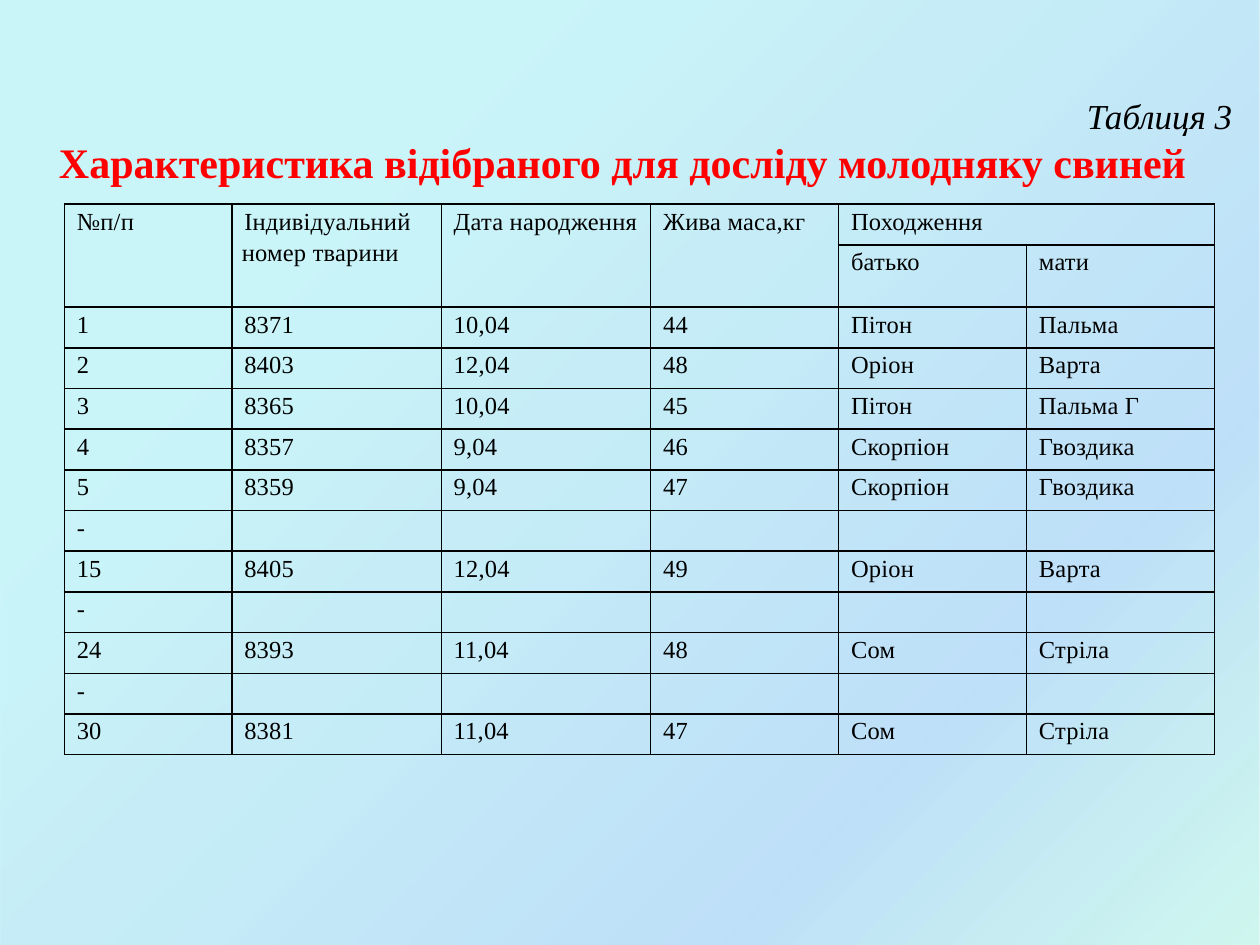
from lxml.etree import SubElement
from pptx import Presentation
from pptx.dml.color import RGBColor
from pptx.enum.shapes import MSO_SHAPE as Shape
from pptx.enum.text import MSO_ANCHOR as Anchor, PP_ALIGN as Align
from pptx.oxml import parse_xml
from pptx.oxml.ns import nsdecls, qn
from pptx.util import Pt

FONT = "Times New Roman"
GRADIENT = [(25, "21D6E0", 23), (75, "0087E6", 25),
            (100, "03D4A8", 18), (100, "005CBF", 26)]
COLUMN_WIDTHS = [95.7, 119.7, 119.7, 107.4, 107.4, 107.4]
ROW_HEIGHT, SUBHEADER_HEIGHT = 23.27, 27.5
HEADERS = [
    ["№п/п", "Індивідуальний номер тварини", "Дата народження",
     "Жива маса,кг", "Походження", ""],
    ["", "", "", "", "батько", "мати"],
]
GAP = ["-", "", "", "", "", ""]
ANIMALS = [
    ["1", "8371", "10,04", "44", "Пітон", "Пальма"],
    ["2", "8403", "12,04", "48", "Оріон", "Варта"],
    ["3", "8365", "10,04", "45", "Пітон", "Пальма Г"],
    ["4", "8357", "9,04", "46", "Скорпіон", "Гвоздика"],
    ["5", "8359", "9,04", "47", "Скорпіон", "Гвоздика"],
    GAP,
    ["15", "8405", "12,04", "49", "Оріон", "Варта"],
    GAP,
    ["24", "8393", "11,04", "48", "Сом", "Стріла"],
    GAP,
    ["30", "8381", "11,04", "47", "Сом", "Стріла"],
]


def color(value):
    return RGBColor.from_string(value)


def apply_format(target, values):
    for name, value in values.items():
        setattr(target, name, value)


def set_indent(paragraph, left, first):
    properties = paragraph._p.get_or_add_pPr()
    properties.set("marL", str(Pt(left)))
    properties.set("indent", str(Pt(first)))


def add_background(slide, left, top, width, height):
    """Cover the slide with a translucent diagonal gradient."""
    backdrop = slide.shapes.add_shape(
        Shape.RECTANGLE, Pt(left), Pt(top), Pt(width), Pt(height))
    backdrop.shadow.inherit = False
    backdrop.line.fill.background()
    backdrop.fill.background()
    stops = "".join(
        f'<a:gs pos="{position * 1000}"><a:srgbClr val="{shade}">'
        f'<a:alpha val="{alpha * 1000}"/></a:srgbClr></a:gs>'
        for position, shade, alpha in GRADIENT)
    gradient = parse_xml(
        f'<a:gradFill {nsdecls("a")} rotWithShape="1"><a:gsLst>{stops}</a:gsLst>'
        '<a:lin ang="2700000" scaled="0"/></a:gradFill>')
    properties = backdrop._element.spPr
    properties.replace(properties.find(qn("a:noFill")), gradient)


def add_title(slide, left, top, width, height):
    frame = slide.shapes.add_textbox(
        Pt(left), Pt(top), Pt(width), Pt(height)).text_frame
    apply_format(frame, {"word_wrap": True, "vertical_anchor": Anchor.MIDDLE})
    lines = [
        ("Таблиця 3", Align.RIGHT, 27.4, "000000",
         {"size": Pt(20), "italic": True}),
        ("Характеристика відібраного для досліду молодняку свиней",
         Align.JUSTIFY, 1.4, "FF0000", {"size": Pt(24), "bold": True}),
    ]
    for index, (text, alignment, first, shade, style) in enumerate(lines):
        paragraph = frame.add_paragraph() if index else frame.paragraphs[0]
        paragraph.alignment = alignment
        set_indent(paragraph, 0, first)
        run = paragraph.add_run()
        run.text = text
        apply_format(run.font, {"name": FONT, **style})
        run.font.color.rgb = color(shade)


def add_borders(cell):
    properties = cell._tc.get_or_add_tcPr()
    for index, side in enumerate(("lnL", "lnR", "lnT", "lnB")):
        properties.insert(index, parse_xml(
            f'<a:{side} {nsdecls("a")} w="{Pt(1)}"><a:solidFill>'
            f'<a:srgbClr val="000000"/></a:solidFill></a:{side}>'))


def fill_cell(cell, text):
    margins = ("margin_left", "margin_right", "margin_top", "margin_bottom")
    apply_format(cell, dict.fromkeys(margins, 0))
    cell.fill.background()
    add_borders(cell)
    paragraph = cell.text_frame.paragraphs[0]
    apply_format(paragraph, {"alignment": Align.JUSTIFY, "line_spacing": 1.15})
    set_indent(paragraph, 5.7, 1.4)
    if not text:
        # The end mark sets the line height of an empty cell
        SubElement(paragraph._p, qn("a:endParaRPr"), sz="1400")
        return
    run = paragraph.add_run()
    run.text = text
    apply_format(run.font, {"name": FONT, "size": Pt(14)})
    run.font.color.rgb = color("000000")
    run._r.get_or_add_rPr().set("spc", "10")


def add_animal_table(slide, left, top):
    rows = HEADERS + ANIMALS
    heights = [ROW_HEIGHT, SUBHEADER_HEIGHT] + [ROW_HEIGHT] * len(ANIMALS)
    table = slide.shapes.add_table(
        len(rows), len(COLUMN_WIDTHS), Pt(left), Pt(top),
        Pt(sum(COLUMN_WIDTHS)), Pt(sum(heights))).table
    apply_format(table, {"first_row": False, "horz_banding": False})
    for column, width in zip(table.columns, COLUMN_WIDTHS):
        column.width = Pt(width)
    for row, height, texts in zip(table.rows, heights, rows):
        row.height = Pt(height)
        for cell, text in zip(row.cells, texts):
            fill_cell(cell, text)
    for column in range(4):
        table.cell(0, column).merge(table.cell(1, column))
    table.cell(0, 4).merge(table.cell(0, 5))


def main():
    deck = Presentation()
    apply_format(deck, {"slide_width": Pt(720), "slide_height": Pt(540)})
    slide = deck.slides.add_slide(deck.slide_layouts[6])
    add_background(slide, 0, 0, 720, 552)
    add_animal_table(slide, 36.8, 116.7)
    add_title(slide, 25.2, 50.4, 686, 60.5)
    deck.save("out.pptx")


if __name__ == "__main__":
    main()
